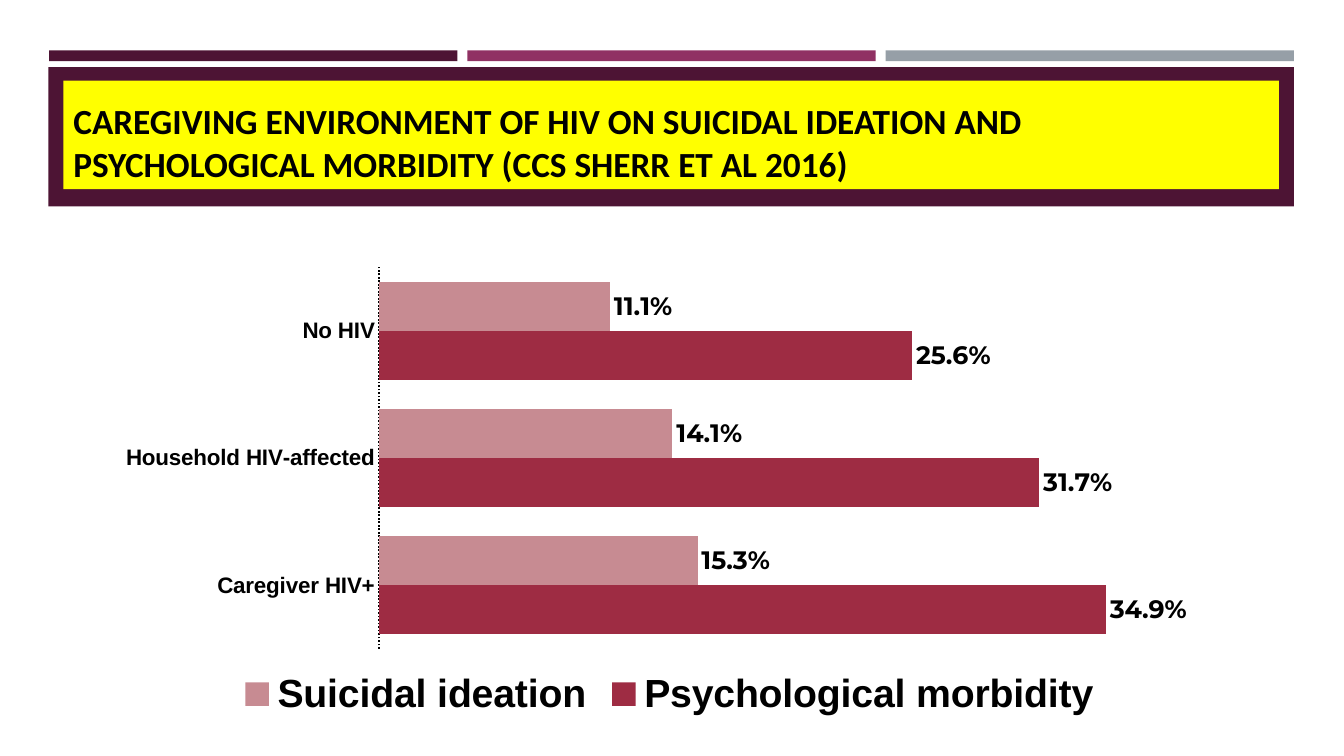
from lxml.etree import SubElement
from pptx import Presentation
from pptx.chart.data import CategoryChartData
from pptx.dml.color import RGBColor
from pptx.enum.chart import XL_CHART_TYPE, XL_LABEL_POSITION, XL_LEGEND_POSITION, XL_TICK_MARK
from pptx.enum.dml import MSO_LINE
from pptx.enum.shapes import MSO_SHAPE
from pptx.enum.text import MSO_ANCHOR, PP_ALIGN
from pptx.oxml.ns import qn
from pptx.util import Cm, Pt

PLUM = RGBColor(0x4D, 0x14, 0x34)
MAGENTA = RGBColor(0x90, 0x31, 0x63)
GREY = RGBColor(0x96, 0x9F, 0xA7)
YELLOW = RGBColor(0xFF, 0xFF, 0x00)
BLACK = RGBColor(0x00, 0x00, 0x00)
CRIMSON = RGBColor(0x9E, 0x2C, 0x43)
ROSE = RGBColor(0xC7, 0x8B, 0x92)

TITLE = ("CAREGIVING ENVIRONMENT OF HIV ON SUICIDAL IDEATION AND "
         "PSYCHOLOGICAL MORBIDITY (CCS SHERR ET AL 2016)")
CATEGORIES = ["Caregiver HIV+", "Household HIV-affected", "No HIV"]
SERIES = [
    ("Psychological morbidity", (0.349, 0.317, 0.256), CRIMSON),
    ("Suicidal ideation", (0.153, 0.141, 0.111), ROSE),
]
PERCENT = "0.0%"


def add_block(left, top, width, height, color):
    block = page.shapes.add_shape(
        MSO_SHAPE.RECTANGLE, Cm(left), Cm(top), Cm(width), Cm(height))
    block.shadow.inherit = False
    block.fill.solid()
    block.fill.fore_color.rgb = color
    block.line.fill.background()
    return block


def style_font(font, name, size, bold=True):
    for key, value in {"name": name, "size": Pt(size), "bold": bold}.items():
        setattr(font, key, value)
    font.color.rgb = BLACK


deck = Presentation()
deck.slide_width, deck.slide_height = Cm(33.87), Cm(19.05)
page = deck.slides.add_slide(deck.slide_layouts[6])

# Header stripes, frame and title
for column, color in enumerate((PLUM, MAGENTA, GREY)):
    add_block(1.24 + column * 10.54, 1.27, 10.29, 0.27, color)
add_block(1.22, 1.69, 31.39, 3.51, PLUM)

title_box = add_block(1.6, 2.03, 30.63, 2.74, YELLOW)
frame = title_box.text_frame
frame.word_wrap = True
frame.vertical_anchor = MSO_ANCHOR.BOTTOM
para = frame.paragraphs[0]
para.alignment = PP_ALIGN.LEFT
span = para.add_run()
span.text = TITLE
style_font(span.font, "Calibri", 25.2)

# Bar chart
data = CategoryChartData(number_format=PERCENT)
data.categories = CATEGORIES
for name, values, color in SERIES:
    data.add_series(name, values)
chart = page.shapes.add_chart(
    XL_CHART_TYPE.BAR_CLUSTERED, Cm(2.62), Cm(6.5), Cm(28.5), Cm(11.73), data).chart
chart.has_title = False
style_font(chart.font, "Calibri", 10, bold=False)

plot = chart.plots[0]
plot.gap_width = 60
plot.vary_by_categories = False
for series, (name, values, color) in zip(plot.series, SERIES):
    series.format.fill.solid()
    series.format.fill.fore_color.rgb = color
    labels = series.data_labels
    label_format = {
        "show_value": True,
        "position": XL_LABEL_POSITION.OUTSIDE_END,
        "number_format": PERCENT,
        "number_format_is_linked": False,
    }
    for key, value in label_format.items():
        setattr(labels, key, value)
    style_font(labels.font, "Montserrat", 18)

category_axis = chart.category_axis
category_axis.major_tick_mark = XL_TICK_MARK.NONE
style_font(category_axis.tick_labels.font, "Arial", 16)
axis_line = category_axis.format.line
axis_line.color.rgb = BLACK
axis_line.width = Pt(1.25)
axis_line.dash_style = MSO_LINE.ROUND_DOT

value_format = {
    "minimum_scale": 0,
    "maximum_scale": 0.4,
    "has_major_gridlines": False,
    "visible": False,
}
for key, value in value_format.items():
    setattr(chart.value_axis, key, value)
chart.value_axis.tick_labels.number_format = PERCENT
chart.value_axis.tick_labels.number_format_is_linked = False

chart.has_legend = True
chart.legend.position = XL_LEGEND_POSITION.BOTTOM
chart.legend.include_in_layout = False
style_font(chart.legend.font, "Arial", 28)

# Inner plot area, as fractions of the chart
plot_area = chart.plots[0]._element.getparent()
layout = plot_area.find(qn("c:layout"))
if layout is None:
    layout = SubElement(plot_area, qn("c:layout"))
    plot_area.insert(0, layout)
manual = SubElement(layout, qn("c:manualLayout"))
plot_layout = {
    "layoutTarget": "inner", "xMode": "edge", "yMode": "edge",
    "x": 0.243, "y": 0.02, "w": 0.737, "h": 0.82,
}
for key, value in plot_layout.items():
    SubElement(manual, qn(f"c:{key}")).set("val", str(value))

deck.save("out.pptx")
